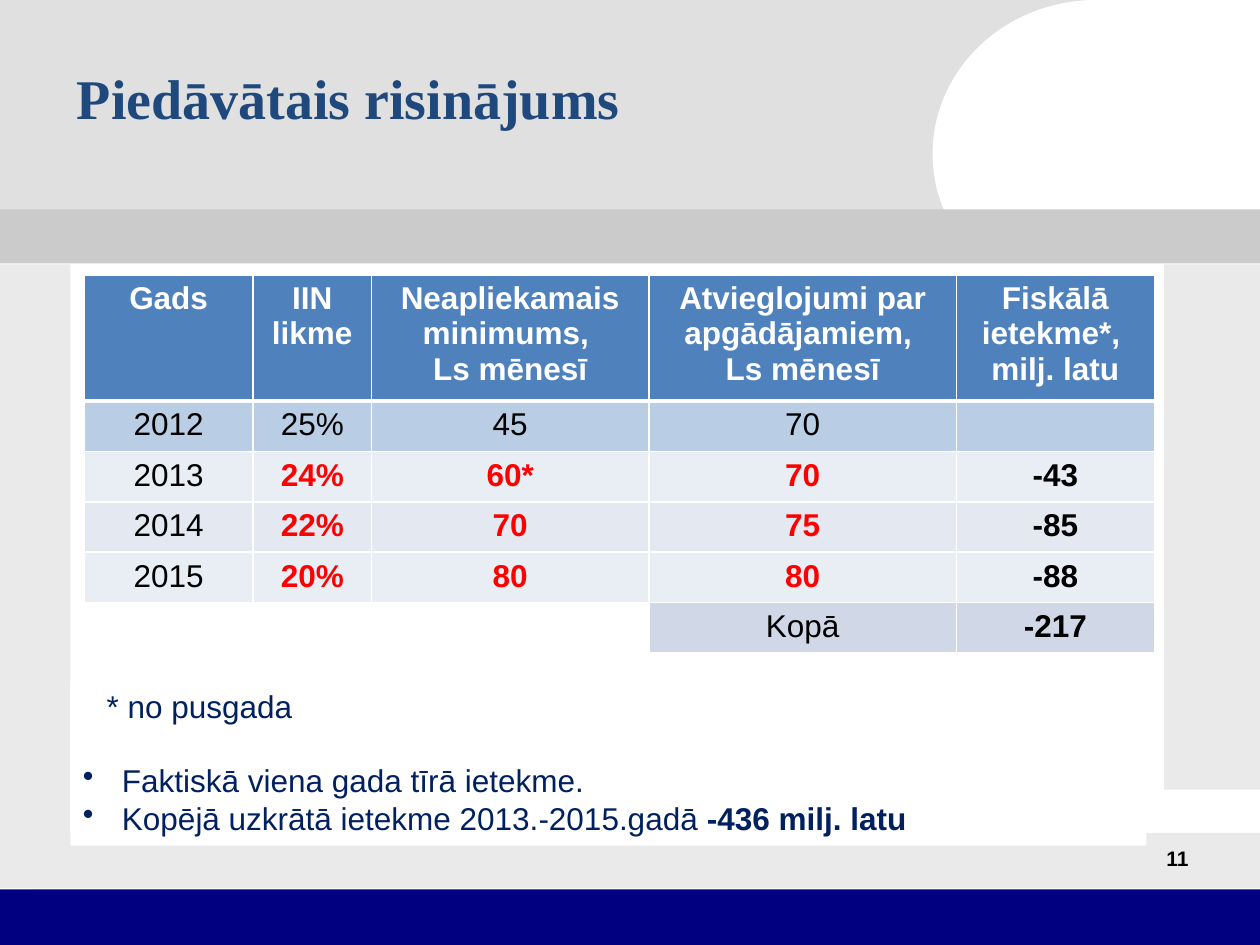
from lxml.etree import SubElement
from pptx import Presentation
from pptx.dml.color import RGBColor
from pptx.enum.shapes import MSO_SHAPE
from pptx.enum.text import MSO_ANCHOR, PP_ALIGN
from pptx.oxml import parse_xml
from pptx.oxml.ns import nsdecls, qn
from pptx.util import Cm, Pt

COLORS = {
    "white": "FFFFFF", "black": "000000", "red": "FF0000",
    "title": "1F497D", "remark": "002060", "footer": "000080",
    "banner": "E0E0E0", "frame": "EAEAEA", "band": "CBCBCB",
    "header": "4F81BD", "current": "B9CDE5", "light": "E9EDF4",
    "medium": "E3E8F1", "total": "D0D8E8",
}

BACKDROP = [
    (MSO_SHAPE.RECTANGLE, (0, 0, 23.09, 4.29), "banner"),
    (MSO_SHAPE.OVAL, (18.8, 0, 6.6, 6.2), "white"),
    (MSO_SHAPE.RECTANGLE, (0, 5.33, 1.42, 12.57), "frame"),
    (MSO_SHAPE.RECTANGLE, (0.66, 16.79, 24.74, 1.12), "frame"),
    (MSO_SHAPE.RECTANGLE, (0, 17.93, 25.4, 1.12), "footer"),
    (MSO_SHAPE.RECTANGLE, (23.47, 5.33, 1.93, 10.59), "frame"),
    (MSO_SHAPE.RECTANGLE, (21.9, 0, 3.5, 5.13), "white"),
    (MSO_SHAPE.RECTANGLE, (0, 4.22, 25.4, 1.09), "band"),
]

ROWS = [
    ("Gads", "IIN likme", "Neapliekamais minimums, \nLs mēnesī",
     "Atvieglojumi par apgādājamiem, \nLs mēnesī", "Fiskālā ietekme*, \nmilj. latu"),
    ("2012", "25%", "45", "70", ""),
    ("2013", "24%", "60*", "70", "-43"),
    ("2014", "22%", "70", "75", "-85"),
    ("2015", "20%", "80", "80", "-88"),
    ("", "", "", "Kopā", "-217"),
]
ROW_FILLS = ["header", "current", "light", "medium", "light", "total"]
COLUMN_WIDTHS = [3.4, 2.39, 5.59, 6.2, 3.99]
ROW_HEIGHTS = [2.11] + [0.86] * 5


def rgb(name):
    return RGBColor.from_string(COLORS[name])


def cell_style(row, column):
    """Return the text colour and boldness of a table cell."""
    if row == 0:
        return "white", True
    if 2 <= row <= 4 and 1 <= column <= 3:
        return "red", True
    return "black", column == 4


class SlideBuilder:
    def __init__(self, slide, font="Arial", size=18):
        self.slide = slide
        self.font = font
        self.size = size

    def style(self, paragraph, color, bold=None, size=None, font=None, align=None):
        paragraph.alignment = align
        paragraph.font.name = font or self.font
        paragraph.font.size = Pt(size or self.size)
        paragraph.font.bold = bold
        paragraph.font.color.rgb = rgb(color)

    def shape(self, kind, box, fill):
        shape = self.slide.shapes.add_shape(kind, *map(Cm, box))
        shape.shadow.inherit = False
        shape.fill.solid()
        shape.fill.fore_color.rgb = rgb(fill)
        shape.line.fill.background()
        return shape

    def text(self, box, words, color, anchor=MSO_ANCHOR.TOP, **style):
        frame = self.slide.shapes.add_textbox(*map(Cm, box)).text_frame
        frame.word_wrap = True
        frame.vertical_anchor = anchor
        frame.text = words
        self.style(frame.paragraphs[0], color, **style)
        return frame

    def borders(self, cell, top, bottom):
        properties = cell._tc.get_or_add_tcPr()
        widths = {"lnL": 1, "lnR": 1, "lnT": top, "lnB": bottom}
        for position, (tag, points) in enumerate(widths.items()):
            properties.insert(position, parse_xml(
                f'<a:{tag} {nsdecls("a")} w="{Pt(points)}"><a:solidFill>'
                f'<a:srgbClr val="{COLORS["white"]}"/></a:solidFill></a:{tag}>'))

    def table(self, left, top):
        size = Cm(sum(COLUMN_WIDTHS)), Cm(sum(ROW_HEIGHTS))
        table = self.slide.shapes.add_table(
            len(ROWS), len(COLUMN_WIDTHS), Cm(left), Cm(top), *size).table
        table.horz_banding = False
        for column, width in zip(table.columns, COLUMN_WIDTHS):
            column.width = Cm(width)
        for row, height in zip(table.rows, ROW_HEIGHTS):
            row.height = Cm(height)
        for row, values in enumerate(ROWS):
            for column, value in enumerate(values):
                cell = table.cell(row, column)
                cell.text = value
                cell.fill.solid()
                cell.fill.fore_color.rgb = rgb(ROW_FILLS[row])
                self.borders(cell, 3 if row == 1 else 1, 3 if row == 0 else 1)
                color, bold = cell_style(row, column)
                for paragraph in cell.text_frame.paragraphs:
                    self.style(paragraph, color, bold, align=PP_ALIGN.CENTER)
        last = len(ROWS) - 1
        table.cell(last, 0).merge(table.cell(last, 2))
        for column in range(3):
            table.cell(last, column).fill.background()

    def remarks(self, box, footnote, bullets):
        """Add a footnote and bullets, each bullet a (plain, bold) pair."""
        frame = self.shape(MSO_SHAPE.RECTANGLE, box, "white").text_frame
        frame.word_wrap = True
        frame.vertical_anchor = MSO_ANCHOR.TOP
        paragraph = frame.paragraphs[0]
        paragraph.text = footnote
        paragraph._p.get_or_add_pPr().set("marL", str(Cm(0.48)))
        paragraph.space_after = Pt(21)
        self.style(paragraph, "remark", align=PP_ALIGN.JUSTIFY)
        for plain, bold in bullets:
            paragraph = frame.add_paragraph()
            properties = paragraph._p.get_or_add_pPr()
            properties.set("marL", str(Cm(0.79)))
            properties.set("indent", str(-Cm(0.79)))
            SubElement(properties, qn("a:buChar"), char="•")
            paragraph.add_run().text = plain
            if bold:
                run = paragraph.add_run()
                run.text = bold
                run.font.bold = True
            self.style(paragraph, "remark", align=PP_ALIGN.JUSTIFY)


def main():
    presentation = Presentation()
    presentation.slide_width, presentation.slide_height = Cm(25.4), Cm(19.05)
    builder = SlideBuilder(presentation.slides.add_slide(presentation.slide_layouts[6]))
    for kind, box, fill in BACKDROP:
        builder.shape(kind, box, fill)
    title = builder.text((1.3, 0.74, 18.8, 3.18), "Piedāvātais risinājums", "title",
                         MSO_ANCHOR.MIDDLE, bold=True, size=32, font="Times New Roman")
    title.margin_bottom = Cm(0.85)
    builder.text((18.47, 16.92, 5.74, 1.27), "11", "black",
                 bold=True, size=12, align=PP_ALIGN.RIGHT)
    builder.table(1.7, 5.54)
    builder.remarks((1.42, 13.72, 21.69, 3.33), "* no pusgada", [
        ("Faktiskā viena gada tīrā ietekme. ", ""),
        ("Kopējā uzkrātā ietekme 2013.-2015.gadā ", "-436 milj. latu "),
    ])
    presentation.save("out.pptx")


if __name__ == "__main__":
    main()
